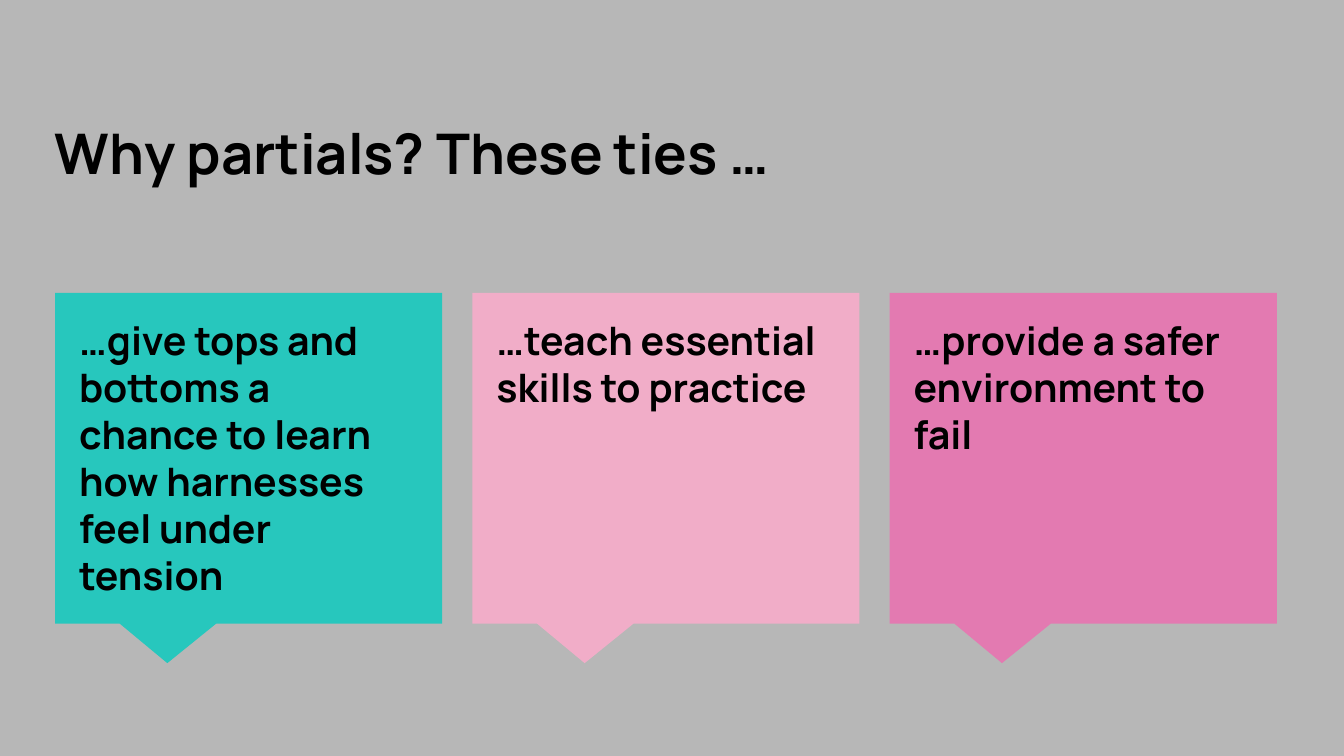
from dataclasses import dataclass

from pptx import Presentation
from pptx.dml.color import RGBColor
from pptx.enum.shapes import MSO_SHAPE as Preset
from pptx.enum.text import MSO_ANCHOR as Anchor, PP_ALIGN as Align
from pptx.util import Inches, Pt

TITLE = "Why partials? These ties …"
REASONS = [
    ("…give tops and bottoms a chance to learn how harnesses feel under tension", "27C7BD"),
    ("…teach essential skills to practice", "F1ADC8"),
    ("…provide a safer environment to fail", "E37AB1"),
]


@dataclass(frozen=True)
class Theme:
    font: str = "Manrope"
    background: str = "B7B7B7"
    text: str = "000000"
    title_size: int = 30
    card_size: int = 21


THEME = Theme()
SLIDE_WIDTH = 10
SLIDE_HEIGHT = SLIDE_WIDTH * 9 / 16
TITLE_BOX = (0.31, 0.78, 9.43, 1.12)
CARDS_LEFT, CARDS_RIGHT = 0.41, 9.5
CARD_TOP, CARD_WIDTH, CARD_HEIGHT = 2.18, 2.88, 2.46
COLUMN_STEP = (CARDS_RIGHT - CARDS_LEFT - CARD_WIDTH) / (len(REASONS) - 1)
TEXT_INSET_X, TEXT_INSET_Y = 0.08, 0.07
TEXT_WIDTH, TEXT_HEIGHT = 2.7, 2.19
POINTER = (-0.21, 0.62)


def add_text(slide, box, text, size):
    frame = slide.shapes.add_textbox(*map(Inches, box)).text_frame
    frame.word_wrap = True
    frame.vertical_anchor = Anchor.TOP
    frame.margin_left = frame.margin_right = Inches(0.1)
    frame.margin_top = frame.margin_bottom = Inches(0.1)
    paragraph = frame.paragraphs[0]
    paragraph.alignment = Align.LEFT
    run = paragraph.add_run()
    run.text = text
    run.font.name = THEME.font
    run.font.size = Pt(size)
    run.font.bold = True
    run.font.color.rgb = RGBColor.from_string(THEME.text)


def add_callout(slide, box, color):
    shape = slide.shapes.add_shape(Preset.RECTANGULAR_CALLOUT, *map(Inches, box))
    shape.adjustments[0], shape.adjustments[1] = POINTER
    shape.shadow.inherit = False
    shape.fill.solid()
    shape.fill.fore_color.rgb = RGBColor.from_string(color)
    shape.line.fill.background()


def main():
    presentation = Presentation()
    presentation.slide_width = Inches(SLIDE_WIDTH)
    presentation.slide_height = Inches(SLIDE_HEIGHT)
    slide = presentation.slides.add_slide(presentation.slide_layouts[6])
    slide.background.fill.solid()
    slide.background.fill.fore_color.rgb = RGBColor.from_string(THEME.background)

    add_text(slide, TITLE_BOX, TITLE, THEME.title_size)
    lefts = [CARDS_LEFT + column * COLUMN_STEP for column in range(len(REASONS))]
    for left, (_, color) in zip(lefts, REASONS):
        add_callout(slide, (left, CARD_TOP, CARD_WIDTH, CARD_HEIGHT), color)
    for left, (reason, _) in zip(lefts, REASONS):
        text_box = (left + TEXT_INSET_X, CARD_TOP + TEXT_INSET_Y, TEXT_WIDTH, TEXT_HEIGHT)
        add_text(slide, text_box, reason, THEME.card_size)

    presentation.save("out.pptx")


if __name__ == "__main__":
    main()
